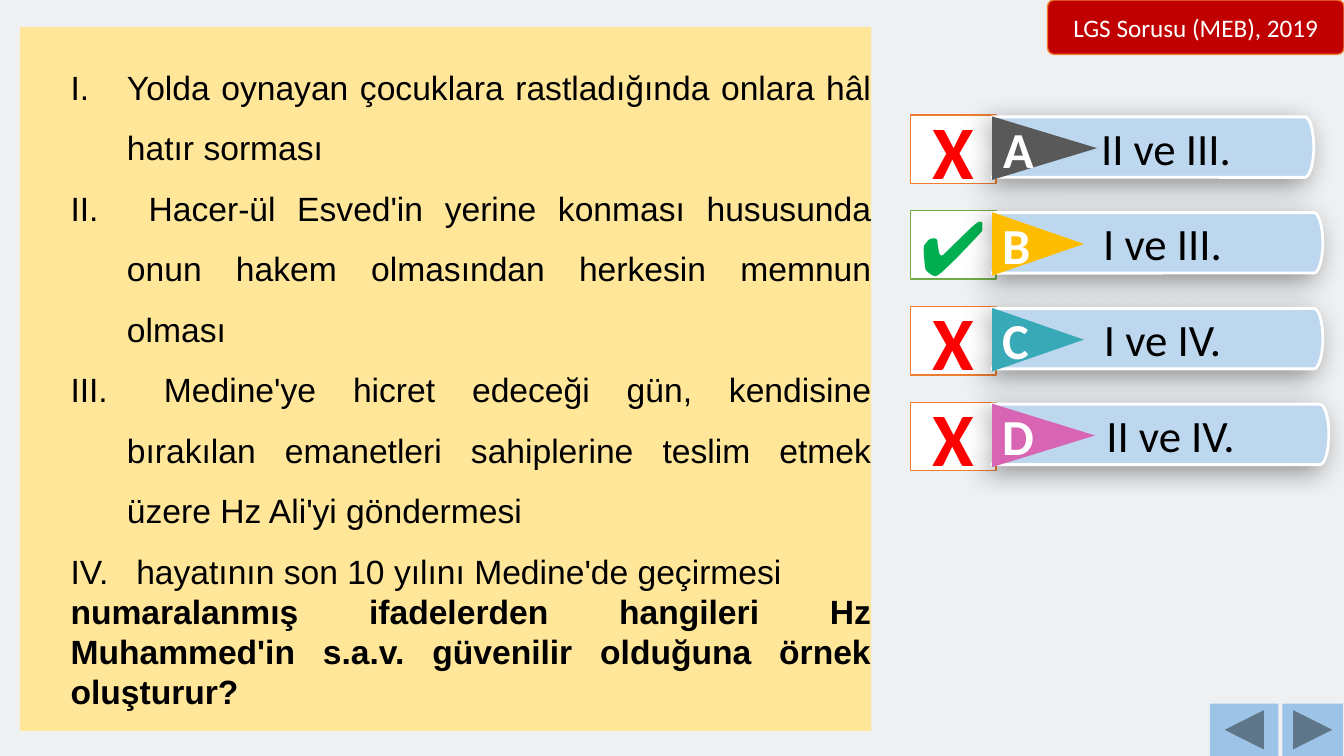
from math import cos, sin, pi
from lxml import etree
from pptx import Presentation
from pptx.dml.color import RGBColor
from pptx.enum.shapes import MSO_SHAPE as Kind
from pptx.enum.text import MSO_ANCHOR as Anchor, PP_ALIGN as Align
from pptx.oxml import parse_xml
from pptx.oxml.ns import qn
from pptx.util import Inches, Pt

# Content
ITEMS = [
    "Yolda oynayan çocuklara rastladığında onlara hâl hatır sorması",
    " Hacer-ül Esved'in yerine konması hususunda onun hakem olmasından "
    "herkesin memnun olması",
    " Medine'ye hicret edeceği gün, kendisine bırakılan emanetleri "
    "sahiplerine teslim etmek üzere Hz Ali'yi göndermesi",
    " hayatının son 10 yılını Medine'de geçirmesi",
]
QUESTION = ("numaralanmış ifadelerden hangileri Hz Muhammed'in s.a.v. "
            "güvenilir olduğuna örnek oluşturur?")
SOURCE = "LGS Sorusu (MEB), 2019"
# letter, answer, right?, bar width, arrow length, text shift, arrow colour
CHOICES = [
    ("A", "II ve III.", False, 3.19, 1.04, 0.26, "595959"),
    ("B", "I ve III.", True, 3.28, 0.91, 0.1, "FFBD00"),
    ("C", "I ve IV.", False, 3.28, 0.91, 0.1, "38A9B7"),
    ("D", "II ve IV.", False, 3.34, 1.02, 0.2, "D864B4"),
]

# Formats
BODY = {"size": Pt(24), "name": "Arial", "bold": False}
ASK = {**BODY, "bold": True}
TAG = {"size": Pt(18), "name": "Calibri"}
ANSWER = {"size": Pt(32), "name": "Calibri"}
LETTER = {"size": Pt(36), "name": "Calibri", "bold": True}
CROSS = {"size": Pt(54), "name": "Calibri", "bold": True}
CHECK = {"size": Pt(54), "name": "Calibri"}

# Layout in inches
TOP, STEP = 1.16, 0.95
MARK_X, MARK_W, MARK_H = 9.03, 0.85, 0.68
BAR_X, BAR_H, NOTCH, CURVE = 9.84, 0.6, 0.16, 0.09
ARROW_W = 0.63
SHADOW = ('<a:outerShdw xmlns:a="http://schemas.openxmlformats.org/drawingml/'
          '2006/main" blurRad="254000" dist="88900" dir="8100000" algn="tr" '
          'rotWithShape="0"><a:srgbClr val="000000"><a:alpha val="40000"/>'
          '</a:srgbClr></a:outerShdw>')


def color(code):
    return RGBColor.from_string(code)


def paint(shape, fill, line=None, width=1):
    shape.shadow.inherit = False
    shape.fill.solid()
    shape.fill.fore_color.rgb = color(fill)
    if line:
        shape.line.color.rgb = color(line)
        shape.line.width = Pt(width)
    else:
        shape.line.fill.background()


def add(shapes, kind, box, fill, line=None):
    shape = shapes.add_shape(kind, *map(Inches, box))
    paint(shape, fill, line)
    return shape


def style(para, text, form, ink, align):
    run = para.add_run()
    run.text = text
    para.alignment = align
    for key, value in form.items():
        setattr(run.font, key, value)
    run.font.color.rgb = color(ink)


def write(shape, text, form, ink, align=Align.CENTER):
    frame = shape.text_frame
    frame.word_wrap = True
    frame.vertical_anchor = Anchor.MIDDLE
    style(frame.paragraphs[0], text, form, ink, align)


def indent(para, left, first):
    props = para._p.get_or_add_pPr()
    props.set("marL", str(Inches(left)))
    props.set("indent", str(Inches(first)))
    return props


def add_bar(shapes, top, width):
    right, mid = BAR_X + width, top + BAR_H / 2
    turns = [pi * (n / 16 - 0.5) for n in range(17)]
    curve = [(right - CURVE + CURVE * cos(t), mid + BAR_H / 2 * sin(t))
             for t in turns]
    points = curve + [(BAR_X, top + BAR_H), (BAR_X + NOTCH, mid)]
    path = shapes.build_freeform(Inches(BAR_X), Inches(top))
    path.add_line_segments([(Inches(x), Inches(y)) for x, y in points])
    bar = path.convert_to_shape()
    paint(bar, "BDD7EE", "FFFFFF", 2)
    bar._element.spPr.find(qn("a:effectLst")).append(parse_xml(SHADOW))
    return bar


deck = Presentation()
deck.slide_width, deck.slide_height = Inches(13.33), Inches(7.5)
slide = deck.slides.add_slide(deck.slide_layouts[6])
slide.background.fill.solid()
slide.background.fill.fore_color.rgb = color("EEF0F2")
shapes = slide.shapes

# Right and wrong marks
for row, choice in enumerate(CHOICES):
    right = choice[2]
    box = (MARK_X, TOP - 0.02 + row * STEP, MARK_W, MARK_H)
    mark = add(shapes, Kind.RECTANGLE, box, "FFFFFF",
               "70AD47" if right else "ED7D31")
    if right:
        write(mark, "✔", CHECK, "00B050", Align.LEFT)
    else:
        write(mark, "X", CROSS, "FF0000")

# Answer bars with lettered arrows
for row, (letter, answer, _, width, length, shift, fill) in enumerate(CHOICES):
    group = shapes.add_group_shape().shapes
    top = TOP + row * STEP
    bar = add_bar(group, top, width)
    write(bar, answer, ANSWER, "000000")
    bar.text_frame.margin_left = Inches(0.1 + shift)
    box = (BAR_X + (length - ARROW_W) / 2,
           top + 0.01 + (BAR_H - length) / 2, ARROW_W, length)
    arrow = add(group, Kind.ISOSCELES_TRIANGLE, box, fill)
    arrow.rotation = 90
    write(arrow, letter, LETTER, "FFFFFF")
    arrow.text_frame._txBody.bodyPr.set("vert", "vert270")

# Page buttons
add(shapes, Kind.ACTION_BUTTON_BACK_OR_PREVIOUS, (12, 6.98, 0.68, 0.52), "9DC3E6")
add(shapes, Kind.ACTION_BUTTON_FORWARD_OR_NEXT, (12.72, 6.98, 0.6, 0.52), "9DC3E6")

# Question panel
panel = add(shapes, Kind.RECTANGLE, (0.2, 0.27, 8.44, 6.98), "FFE699")
frame = panel.text_frame
frame.word_wrap = True
frame.vertical_anchor = Anchor.MIDDLE
for side in ("left", "top", "right", "bottom"):
    setattr(frame, "margin_" + side, 0)
for n, item in enumerate(ITEMS):
    para = frame.add_paragraph() if n else frame.paragraphs[0]
    para.level = 1
    para.line_spacing = 1.5
    props = indent(para, 1.06, -0.56)
    etree.SubElement(props, qn("a:buFont"), typeface="+mj-lt")
    etree.SubElement(props, qn("a:buAutoNum"), type="romanUcPeriod")
    style(para, item, BODY, "000000", Align.JUSTIFY)
para = frame.add_paragraph()
para.level = 1
indent(para, 0.5, 0)
style(para, QUESTION, ASK, "000000", Align.JUSTIFY)

# Source tag
tag = add(shapes, Kind.ROUNDED_RECTANGLE, (10.39, 0, 2.94, 0.54), "C00000", "ED7D31")
tag.adjustments[0] = 0.12
write(tag, SOURCE, TAG, "FFFFFF")

deck.save("out.pptx")
